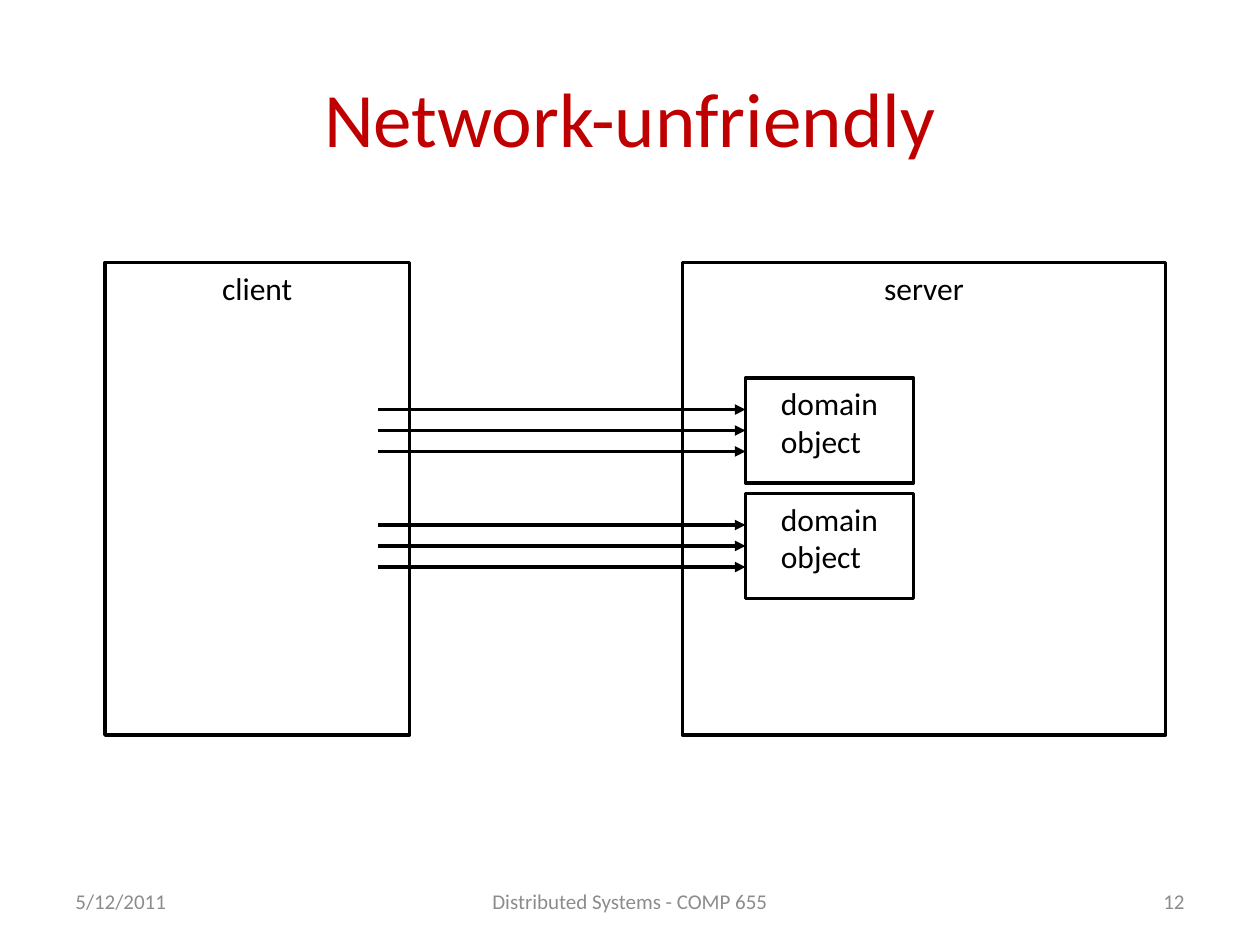
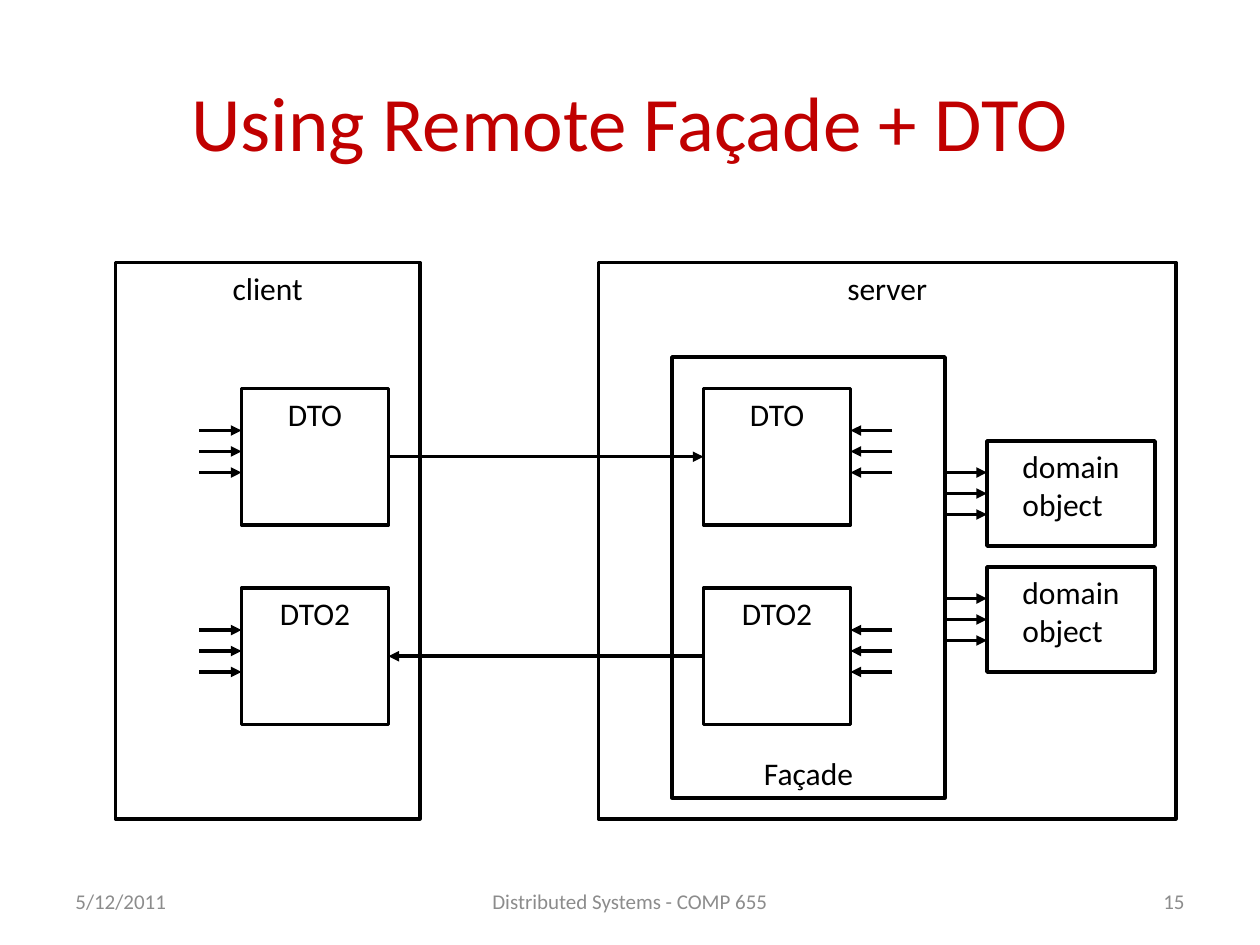
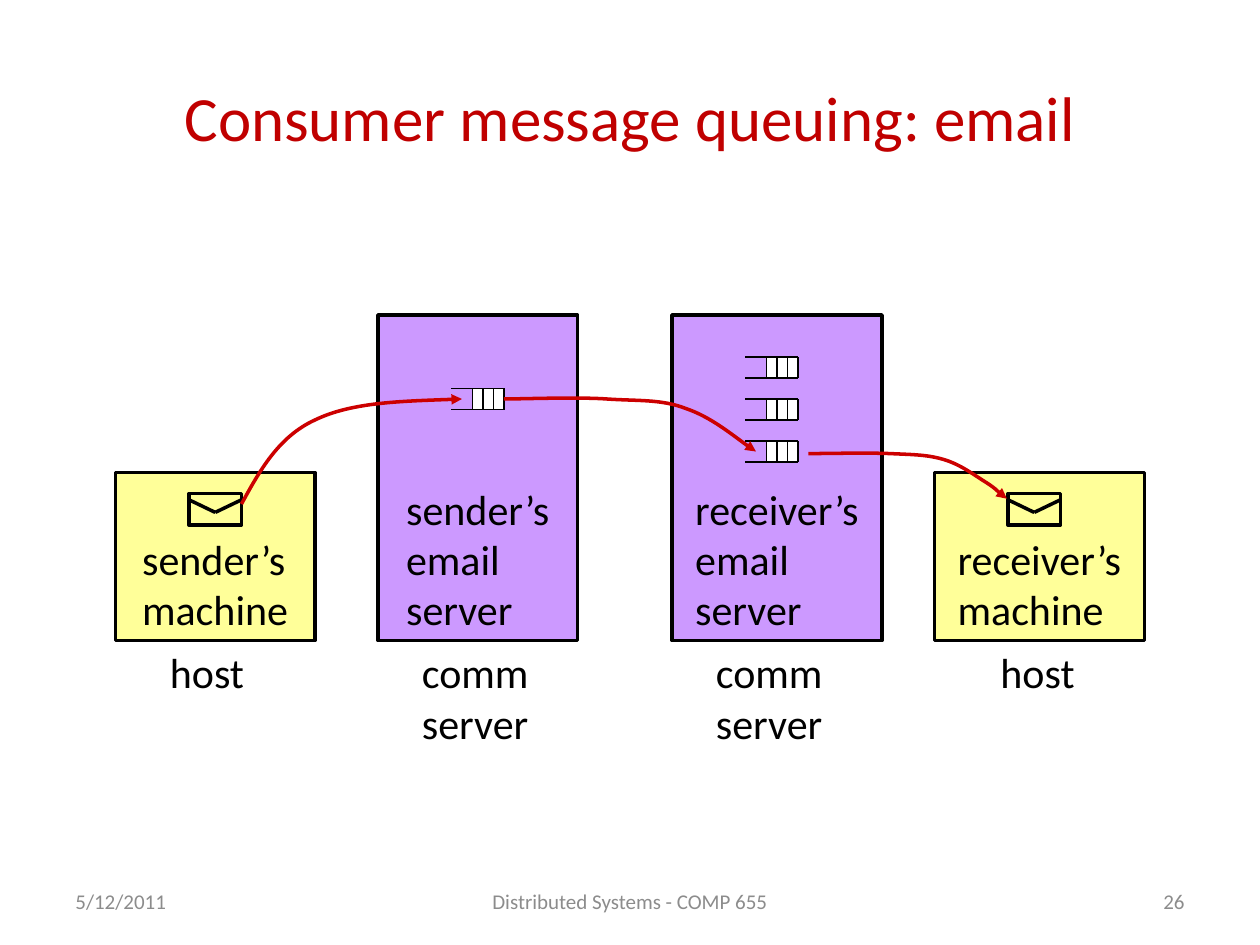
import lxml.etree
import pptx
import pptx.dml.color
import pptx.enum.shapes
import pptx.enum.text
import pptx.oxml.ns
import pptx.util

PX = 7620  # EMU in one px, 120 px to the inch
ALIGN = pptx.enum.text.PP_ALIGN
ANCHOR = pptx.enum.text.MSO_ANCHOR
THEME = {
    "font": "Calibri",
    "ink": "000000", "title": "C00000", "foot": "8C8C8C", "flow": "CC0000",
    "host": "FFFF99", "comm": "CC99FF", "slot": "FFFFFF",
    "big": 44, "mid": 36, "name": 24, "label": 18, "small": 12,
    "bold": 2, "thin": 0.75,
}

# Shared footers: text (None for the slide number), place, alignment
FEET = [
    ("5/12/2011", (60, 834, 280, 48), ALIGN.LEFT),
    ("Distributed Systems - COMP 655", (410, 834, 380, 48), ALIGN.CENTER),
    (None, (860, 834, 280, 48), ALIGN.RIGHT),
]

# Boxes: text, place, anchor. Trios: start x, end x, y of the first arrow
OBJECT = "domain\nobject"
DIRECT = {
    "title": "Network-unfriendly", "number": 12,
    "place": (60, 36, 1080, 150), "size": "big",
    "boxes": [
        ("client", (100, 250, 290, 450), ANCHOR.TOP),
        ("server", (650, 250, 460, 450), ANCHOR.TOP),
        (OBJECT, (710, 360, 160, 100), ANCHOR.TOP),
        (OBJECT, (710, 470, 160, 100), ANCHOR.TOP),
    ],
    "trios": [(360, 710, 390), (360, 710, 500)],
    "links": [],
}
FACADE = {
    "title": "Using Remote Façade + DTO", "number": 15,
    "place": (60, 50, 1080, 130), "size": "big",
    "boxes": [
        ("client", (110, 250, 290, 530), ANCHOR.TOP),
        ("server", (570, 250, 550, 530), ANCHOR.TOP),
        ("Façade", (640, 340, 260, 420), ANCHOR.BOTTOM),
    ] + [
        (name, (x, y, 140, 130), ANCHOR.TOP)
        for name, y in (("DTO", 370), ("DTO2", 560)) for x in (230, 670)
    ] + [(OBJECT, (940, y, 160, 100), ANCHOR.TOP) for y in (420, 540)],
    "trios": [(900, 940, 450), (900, 940, 570)] + [
        (*ends, y) for y in (410, 600) for ends in ((190, 230), (850, 810))
    ],
    "links": [((370, 435), (670, 435)), ((670, 625), (370, 625))],
}
EMAIL = {
    "title": "Consumer message queuing: email", "number": 26,
    "place": (60, 36, 1080, 150), "size": "mid",
    "boxes": [
        ("sender’s\nmachine", (110, 450, 190, 160), "host"),
        ("sender’s\nemail\nserver", (360, 300, 190, 310), "comm"),
        ("receiver’s\nemail\nserver", (640, 300, 200, 310), "comm"),
        ("receiver’s\nmachine", (890, 450, 200, 160), "host"),
    ],
    "mails": [(180, 470), (960, 470)],
    "queues": [(430, 370), (710, 340), (710, 380), (710, 420)],
    # Each flow: a start, then three points for every Bezier piece
    "flows": [
        [(230, 480), (247, 449), (265, 416), (300, 400),
         (335, 383), (388, 382), (440, 380)],
        [(480, 380), (497, 380), (550, 378), (578, 380),
         (607, 382), (630, 380), (653, 389),
         (677, 397), (706, 421), (720, 430)],
        [(770, 432), (784, 432), (827, 431), (848, 432),
         (870, 433), (884, 433), (900, 438),
         (916, 443), (930, 454), (940, 460),
         (949, 466), (954, 472), (959, 475)],
    ],
    "notes": [
        ("host", (150, 610, 107, 60)), ("host", (941, 610, 107, 60)),
        ("comm\nserver", (390, 610, 145, 108)),
        ("comm\nserver", (670, 610, 145, 108)),
    ],
}


def put(obj, form):
    for key, val in form.items():
        setattr(obj, key, val)


def emu(nums):
    return [pptx.util.Emu(n * PX) for n in nums]


def rgb(name):
    return pptx.dml.color.RGBColor.from_string(THEME[name])


def write(shape, text, size, color="ink", align=ALIGN.LEFT, **form):
    frame = shape.text_frame
    frame.text = text
    put(frame, {"word_wrap": True, **form})
    for para in frame.paragraphs:
        para.alignment = align
        put(para.runs[0].font, {"name": THEME["font"],
                                "size": pptx.util.Pt(THEME[size])})
        para.runs[0].font.color.rgb = rgb(color)


def stroke(shape, color="ink", width="bold", head=False):
    shape.line.color.rgb = rgb(color)
    shape.line.width = pptx.util.Pt(THEME[width])
    if head:
        tag = pptx.oxml.ns.qn("a:tailEnd")
        lxml.etree.SubElement(shape.line._get_or_add_ln(), tag,
                              type="triangle")


class Page:
    def __init__(self, deck, data):
        self.slide = deck.slides.add_slide(deck.slide_layouts[5])
        self.shapes = self.slide.shapes
        self.ports = {}  # middle of a side -> (box, site)
        for text, place, align in FEET:
            self.note(text or str(data["number"]), place, "small", "foot",
                      align, vertical_anchor=ANCHOR.MIDDLE)
        title = self.shapes.title
        put(title, dict(zip(("left", "top", "width", "height"),
                            emu(data["place"]))))
        write(title, data["title"], data["size"], "title", ALIGN.CENTER,
              vertical_anchor=ANCHOR.MIDDLE,
              auto_size=pptx.enum.text.MSO_AUTO_SIZE.NONE)

    def note(self, text, place, *style, **form):
        write(self.shapes.add_textbox(*emu(place)), text, *style, **form)

    def box(self, place, fill=None, edge=True):
        kind = pptx.enum.shapes.MSO_SHAPE.RECTANGLE
        box = self.shapes.add_shape(kind, *emu(place))
        box.shadow.inherit = False
        if fill:
            box.fill.solid()
            box.fill.fore_color.rgb = rgb(fill)
        else:
            box.fill.background()
        if edge:
            stroke(box)
        else:
            box.line.fill.background()
        x, y, w, h = place
        sides = [(x + w / 2, y), (x, y + h / 2),
                 (x + w / 2, y + h), (x + w, y + h / 2)]
        self.ports.update({p: (box, n) for n, p in enumerate(sides)})
        return box

    def panel(self, text, place, size, anchor, fill=None, wrap=True):
        box = self.box(place, fill)
        write(box, text, size, vertical_anchor=anchor, word_wrap=wrap)
        # Centre the block of text while its lines stay left aligned
        box.text_frame._txBody.bodyPr.set("anchorCtr", "1")

    def line(self, start, end, width="bold", head=False):
        kind = pptx.enum.shapes.MSO_CONNECTOR.STRAIGHT
        line = self.shapes.add_connector(kind, *emu(start + end))
        stroke(line, width=width, head=head)
        tag = pptx.oxml.ns.qn("a:effectLst")
        lxml.etree.SubElement(line._element.spPr, tag)
        if start in self.ports:
            line.begin_connect(*self.ports[start])
        if end in self.ports:
            line.end_connect(*self.ports[end])

    def mail(self, x, y):
        self.box((x, y, 50, 30))
        for side in (x + 50, x):
            self.line((x + 25, y + 18), (side, y + 6))

    def queue(self, x, y):
        self.box((x + 20, y, 30, 20), "slot", edge=False)
        for row in (y, y + 20):
            self.line((x, row), (x + 50, row), "thin")
        for col in range(x + 20, x + 51, 10):
            self.line((col, y + 20), (col, y), "thin")

    def flow(self, points):
        build = self.shapes.build_freeform(*points[0], scale=PX)
        build.add_line_segments(points[1:], close=False)
        curve = build.convert_to_shape()
        # Turn every three straight segments into one Bezier piece
        steps = curve._element.xpath(".//a:lnTo")
        tag = pptx.oxml.ns.qn("a:cubicBezTo")
        for n in range(0, len(steps), 3):
            piece = lxml.etree.Element(tag)
            steps[n].addprevious(piece)
            for step in steps[n:n + 3]:
                piece.append(step[0])
                step.getparent().remove(step)
        curve.shadow.inherit = False
        curve.fill.background()
        stroke(curve, "flow", head=True)


def draw_calls(deck, data):
    page = Page(deck, data)
    for text, place, anchor in data["boxes"]:
        page.panel(text, place, "label", anchor)
    for start, end, top in data["trios"]:
        for y in range(top, top + 41, 20):
            page.line((start, y), (end, y), head=True)
    for start, end in data["links"]:
        page.line(start, end, head=True)


def draw_email(deck, data):
    page = Page(deck, data)
    for text, place, fill in data["boxes"]:
        page.panel(text, place, "name", ANCHOR.BOTTOM, fill, wrap=False)
    for spot in data["mails"]:
        page.mail(*spot)
    for spot in data["queues"]:
        page.queue(*spot)
    for points in data["flows"]:
        page.flow(points)
    for text, place in data["notes"]:
        page.note(text, place, "name")


def main():
    deck = pptx.Presentation()
    put(deck, {"slide_width": pptx.util.Inches(10),
               "slide_height": pptx.util.Inches(7.5)})
    draw_calls(deck, DIRECT)
    draw_calls(deck, FACADE)
    draw_email(deck, EMAIL)
    deck.save("out.pptx")


if __name__ == "__main__":
    main()
